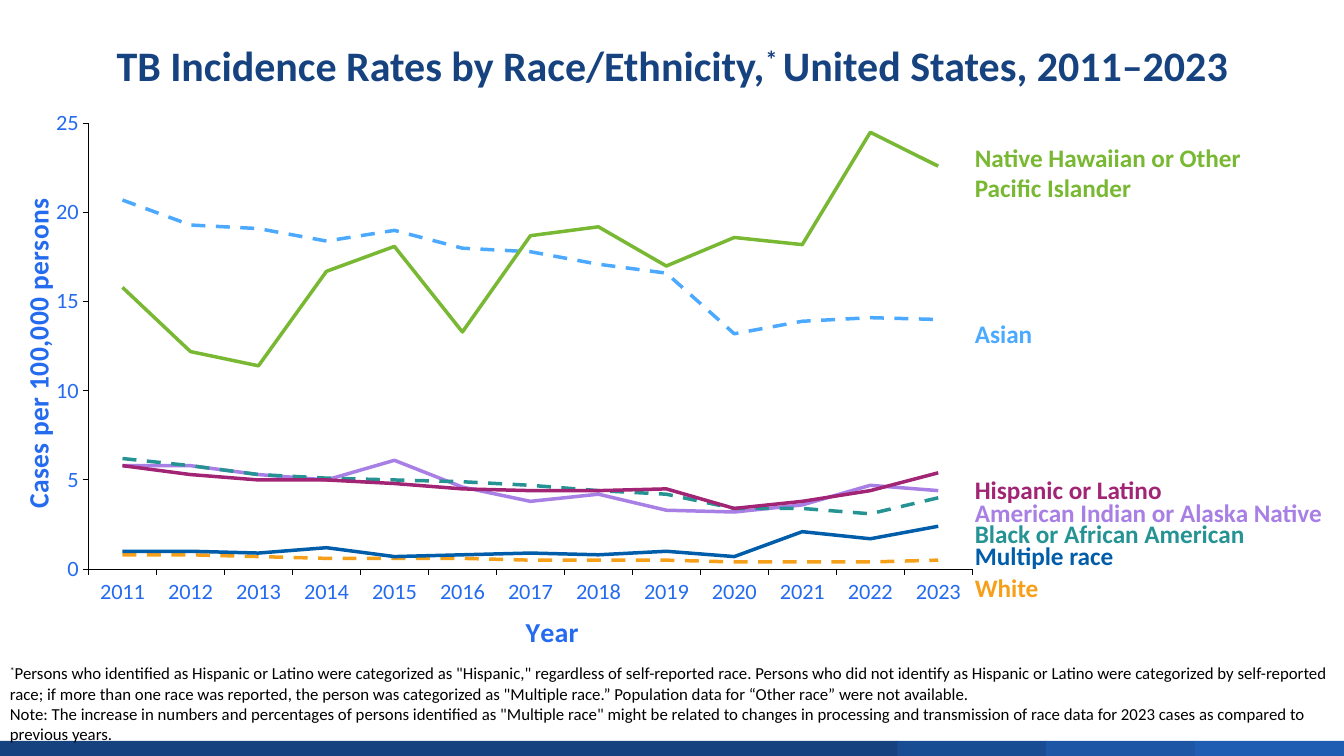
from pptx import Presentation
from pptx.chart.data import CategoryChartData
from pptx.dml.color import RGBColor
from pptx.enum.chart import XL_CHART_TYPE as Kind, XL_TICK_MARK as Tick
from pptx.enum.dml import MSO_LINE as Dash
from pptx.enum.shapes import MSO_SHAPE as Shape
from pptx.enum.text import MSO_ANCHOR as Anchor, PP_ALIGN as Align
from pptx.oxml import parse_xml
from pptx.oxml.ns import nsdecls, qn
from pptx.util import Inches, Pt

NAVY, AXIS, BLACK = "164380", "246BF0", "000000"
LILAC, SKY, TEAL, GREEN = "A87FE5", "4BA9FF", "259393", "78B832"
GOLD, BLUE, PLUM = "F6A01A", "005DAA", "A22474"


def rgb(code):
    return RGBColor.from_string(code)


class Deck:
    face = "Calibri"

    def __init__(self):
        self.prs = Presentation()
        self.prs.slide_width, self.prs.slide_height = Inches(13.33), Inches(7.5)
        self.slide = self.prs.slides.add_slide(self.prs.slide_layouts[6])

    def style(self, font, size, color, bold=False):
        font.name, font.size, font.bold = self.face, Pt(size), bold
        font.color.rgb = rgb(color)

    def bar(self, x, y, w, h, color):
        box = self.slide.shapes.add_shape(Shape.RECTANGLE, *map(Inches, (x, y, w, h)))
        box.shadow.inherit = False
        box.fill.solid()
        box.fill.fore_color.rgb = rgb(color)
        box.line.fill.background()

    def text(self, x, y, w, h, paras, size, color, bold=False, wrap=True,
             align=Align.LEFT, anchor=Anchor.TOP, space=None):
        """Each paragraph is a list of runs; a run of "*" is raised."""
        box = self.slide.shapes.add_textbox(*map(Inches, (x, y, w, h)))
        frame = box.text_frame
        frame.word_wrap, frame.vertical_anchor = wrap, anchor
        for i, runs in enumerate(paras):
            para = frame.paragraphs[0] if i == 0 else frame.add_paragraph()
            para.alignment, para.line_spacing = align, space
            for words in runs:
                run = para.add_run()
                run.text = words
                self.style(run.font, size, color, bold)
                if words.strip() == "*":
                    run.font._element.set("baseline", "30000")

    def place(self, part, index, spot, inner=False):
        """Fix a chart part at fractions of the chart: x, y and maybe w, h."""
        for old in part.findall(qn("c:layout")):
            part.remove(old)
        tags = '<c:layoutTarget val="inner"/>' if inner else ""
        tags += '<c:xMode val="edge"/><c:yMode val="edge"/>'
        tags += "".join(f'<c:{k} val="{v}"/>' for k, v in zip("xywh", spot))
        part.insert(index, parse_xml(
            f'<c:layout {nsdecls("c")}><c:manualLayout>{tags}</c:manualLayout></c:layout>'))

    def axis(self, axis, title, turn, spot):
        axis.has_major_gridlines = False
        axis.major_tick_mark, axis.minor_tick_mark = Tick.OUTSIDE, Tick.NONE
        self.style(axis.tick_labels.font, 16, AXIS)
        axis.format.line.color.rgb = rgb(BLACK)
        axis.format.line.width = Pt(0.75)
        frame = axis.axis_title.text_frame
        run = frame.paragraphs[0].add_run()
        run.text = title
        self.style(run.font, 20, AXIS, True)
        frame._txBody.find(qn("a:bodyPr")).set("rot", str(turn * 60000))
        self.place(axis.axis_title._element, 1, spot)

    def lines(self, x, y, w, h, cats, rows, plot):
        data = CategoryChartData(number_format="0.0")
        data.categories = cats
        for i, (color, dash, vals) in enumerate(rows, 1):
            data.add_series(f"Series {i}", vals)
        chart = self.slide.shapes.add_chart(
            Kind.LINE, *map(Inches, (x, y, w, h)), data).chart
        chart.has_legend = chart.has_title = False
        chart.font.name, chart.font.size = "Cabin", Pt(18)
        chart.font.color.rgb = rgb("0F56DC")
        chart.plots[0].vary_by_categories = False
        for ser, (color, dash, vals) in zip(chart.plots[0].series, rows):
            ser.smooth = False
            ser.format.line.color.rgb = rgb(color)
            ser.format.line.width = Pt(2.5)
            if dash:
                ser.format.line.dash_style = Dash.DASH

        # Axes and plot area
        self.axis(chart.category_axis, "Year", 0, (0.4, 0.93))
        rate = chart.value_axis
        self.axis(rate, "Cases per 100,000 persons", -90, (0.01, 0.19))
        rate.minimum_scale, rate.maximum_scale, rate.major_unit = 0, 25, 5
        rate.tick_labels.number_format = "#,##0"
        rate.tick_labels.number_format_is_linked = False
        self.place(chart._chartSpace.chart.plotArea, 0, plot, inner=True)


def main():
    deck = Deck()

    # Bottom band
    deck.bar(0, 7.35, 8.91, 0.16, NAVY)
    for i, color in enumerate(["194D93", "1C56A4", "1E5DB2"]):
        deck.bar(8.9 + i * 1.475, 7.35, 1.48, 0.16, color)

    # Title
    deck.text(0.67, 0.24, 12, 0.7,
              [["TB Incidence Rates by Race/Ethnicity,", "* ", "United States, 2011–2023"]],
              30, NAVY, True, align=Align.CENTER, anchor=Anchor.BOTTOM, space=1.29)

    # Rates by group: colour, dashed, values
    rows = [
        (LILAC, False, [5.8, 5.8, 5.3, 5, 6.1, 4.6, 3.8, 4.2, 3.3, 3.2, 3.6, 4.7, 4.4]),
        (SKY, True, [20.7, 19.3, 19.1, 18.4, 19, 18, 17.8, 17.1, 16.6, 13.2, 13.9, 14.1, 14]),
        (TEAL, True, [6.2, 5.8, 5.3, 5.1, 5, 4.9, 4.7, 4.4, 4.2, 3.4, 3.4, 3.1, 4]),
        (GREEN, False, [15.8, 12.2, 11.4, 16.7, 18.1, 13.3, 18.7, 19.2, 17, 18.6, 18.2,
                        24.5, 22.6]),
        (GOLD, True, [0.8, 0.8, 0.7, 0.6, 0.6, 0.6, 0.5, 0.5, 0.5, 0.4, 0.4, 0.4, 0.5]),
        (BLUE, False, [1, 1, 0.9, 1.2, 0.7, 0.8, 0.9, 0.8, 1, 0.7, 2.1, 1.7, 2.4]),
        (PLUM, False, [5.8, 5.3, 5, 5, 4.8, 4.5, 4.4, 4.4, 4.5, 3.4, 3.8, 4.4, 5.4]),
    ]
    years = [str(year) for year in range(2011, 2024)]
    deck.lines(0, 0.94, 12.91, 5.59, years, rows, (0.068, 0.052, 0.679, 0.808))

    # Line labels: words, top, width, height, colour
    labels = [
        ("Native Hawaiian or Other Pacific Islander", 1.36, 2.85, 0.67, GREEN),
        ("American Indian or Alaska Native", 4.88, 3.79, 0.38, LILAC),
        ("Asian", 3.11, 0.77, 0.38, SKY),
        ("Multiple race", 5.31, 1.59, 0.38, BLUE),
        ("White", 5.63, 0.86, 0.38, GOLD),
        ("Black or African American", 5.09, 3.01, 0.38, TEAL),
        ("Hispanic or Latino", 4.66, 2.15, 0.38, PLUM),
    ]
    for words, top, wide, high, color in labels:
        deck.text(9.57, top, wide, high, [[words]], 18, color, True, wrap=wide > 2.5)

    # Footnotes
    deck.text(0, 6.53, 13.33, 0.81, [
        ["*", 'Persons who identified as Hispanic or Latino were categorized as "Hispanic," '
         "regardless of self-reported race. Persons who did not identify as Hispanic or "
         "Latino were categorized by self-reported race; if more than one race was reported, "
         'the person was categorized as "Multiple race.” Population data for “Other race” '
         "were not available."],
        ["Note: The increase in numbers and percentages of persons identified as "
         '"Multiple race" might be related to changes in processing and transmission of '
         "race data for 2023 cases as compared to previous years."],
    ], 12, BLACK)

    deck.prs.save("out.pptx")


if __name__ == "__main__":
    main()
